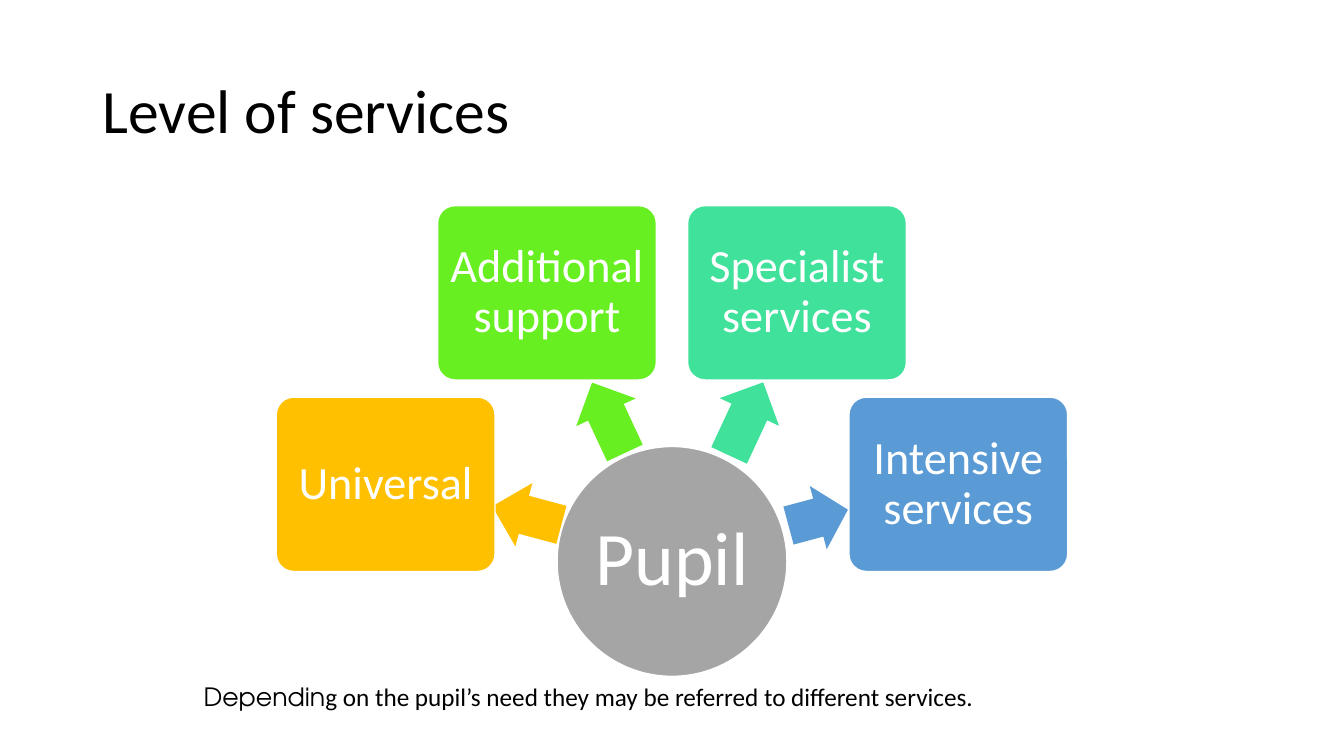
from pptx import Presentation
from pptx.dml.color import RGBColor
from pptx.enum.shapes import MSO_SHAPE
from pptx.enum.text import MSO_ANCHOR, PP_ALIGN
from pptx.util import Inches, Pt

ELLIPSE, ROUNDED, ARROW = MSO_SHAPE.OVAL, MSO_SHAPE.ROUNDED_RECTANGLE, MSO_SHAPE.LEFT_ARROW
MIDDLE, TOP = MSO_ANCHOR.MIDDLE, MSO_ANCHOR.TOP
CENTER, LEFT = PP_ALIGN.CENTER, PP_ALIGN.LEFT

COLORS = {
    "black": "000000",
    "white": "FFFFFF",
    "pupil": "A5A5A5",
    "universal": "FFC000",
    "additional": "67EF21",
    "specialist": "3FE19B",
    "intensive": "5B9BD5",
}

WIDTH, HEIGHT = 13.33, 7.5
MID_X = WIDTH / 2
PUPIL_SIZE, PUPIL_TOP = 2.28, 4.43
BOX_WIDTH, BOX_HEIGHT = 2.17, 1.73
ARROW_HEIGHT = 0.65
INNER_OFFSET, OUTER_OFFSET = 1.24, 2.84
UPPER_ROW, LOWER_ROW = 2.04, 3.94
FIRST_ANGLE, ANGLE_STEP = 15, 50

prs = Presentation()
prs.slide_width, prs.slide_height = Inches(WIDTH), Inches(HEIGHT)
slide = prs.slides.add_slide(prs.slide_layouts[6])


def add_block(kind, left, top, width, height, color, outlined=True):
    block = slide.shapes.add_shape(kind, Inches(left), Inches(top), Inches(width), Inches(height))
    block.shadow.inherit = False
    block.fill.solid()
    block.fill.fore_color.rgb = RGBColor.from_string(COLORS[color])
    if outlined:
        block.line.color.rgb = RGBColor.from_string(COLORS["white"])
        block.line.width = Pt(1)
    else:
        block.line.fill.background()
    return block


def write(holder, parts, size, color, anchor, align, spacing, inset_x, inset_y):
    frame = holder.text_frame
    frame.word_wrap = True
    frame.vertical_anchor = anchor
    frame.margin_left = frame.margin_right = Inches(inset_x)
    frame.margin_top = frame.margin_bottom = Inches(inset_y)
    paragraph = frame.paragraphs[0]
    paragraph.alignment = align
    paragraph.line_spacing = spacing
    for words, font in parts:
        run = paragraph.add_run()
        run.text = words
        run.font.name = font
        run.font.size = Pt(size)
        run.font.color.rgb = RGBColor.from_string(COLORS[color])


title = slide.shapes.add_textbox(Inches(0.92), Inches(0.4), Inches(11.5), Inches(1.45))
write(title, [("Level of services", "Calibri")], 44, "black", MIDDLE, LEFT, 0.9, 0.1, 0.05)

pupil = add_block(ELLIPSE, MID_X - PUPIL_SIZE / 2, PUPIL_TOP, PUPIL_SIZE, PUPIL_SIZE, "pupil")
write(pupil, [("Pupil", "Calibri")], 54, "white", MIDDLE, CENTER, 0.9, 0.04, 0.04)

services = [
    ("Universal", "universal", -OUTER_OFFSET, LOWER_ROW, (4.87, 4.79, 0.71)),
    ("Additional support", "additional", -INNER_OFFSET, UPPER_ROW, (5.65, 3.82, 0.77)),
    ("Specialist services", "specialist", INNER_OFFSET, UPPER_ROW, (7, 3.83, 0.8)),
    ("Intensive services", "intensive", OUTER_OFFSET, LOWER_ROW, (7.81, 4.81, 0.61)),
]
for index, (label, color, offset, row, (arrow_left, arrow_top, arrow_length)) in enumerate(services):
    arrow = add_block(ARROW, arrow_left, arrow_top, arrow_length, ARROW_HEIGHT, color, outlined=False)
    arrow.adjustments[0], arrow.adjustments[1] = 0.6, 0.5
    arrow.rotation = FIRST_ANGLE + index * ANGLE_STEP
    service = add_block(ROUNDED, MID_X + offset - BOX_WIDTH / 2, row, BOX_WIDTH, BOX_HEIGHT, color)
    service.adjustments[0] = 0.1
    write(service, [(label, "Calibri")], 33, "white", MIDDLE, CENTER, 0.9, 0.07, 0.07)

referral = slide.shapes.add_textbox(Inches(1.97), Inches(6.71), Inches(9.36), Inches(0.4))
referral_parts = [
    ("Dependin", "TeX Gyre Adventor"),
    ("g on the pupil’s need they may be referred to different services.", "Calibri"),
]
write(referral, referral_parts, 18, "black", TOP, LEFT, 1.0, 0.05, 0.05)

prs.save("out.pptx")
